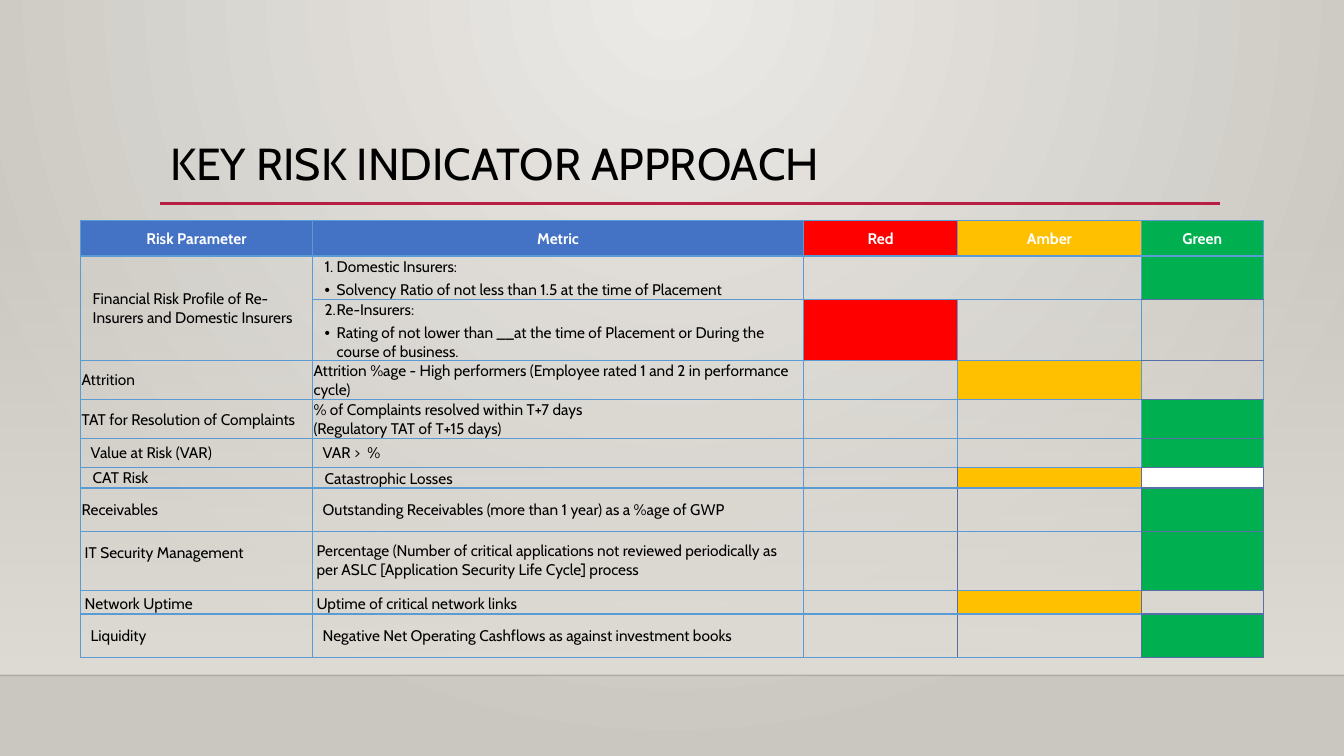
from dataclasses import dataclass
from typing import Any, Optional

from lxml.etree import SubElement as Sub
from pptx import Presentation
from pptx.dml.color import RGBColor as Rgb
from pptx.enum.shapes import MSO_CONNECTOR as Link, MSO_SHAPE as Shape
from pptx.enum.text import MSO_ANCHOR as Anchor, PP_ALIGN as Align
from pptx.oxml.ns import qn
from pptx.util import Inches, Pt


@dataclass(frozen=True)
class Theme:
    font: str = "Cabin"
    title_size: int = 32
    body_size: int = 11
    black: str = "000000"
    white: str = "FFFFFF"
    header: str = "4472C4"
    red: str = "FF0000"
    amber: str = "FFC000"
    green: str = "00B050"
    grid: str = "5B9BD5"
    indigo: str = "586EA6"
    accent: str = "B71E42"
    floor_line: str = "000001"
    wall: str = "DFDBD5"
    glow: str = "ECEAE7"
    edge: str = "CAC7C1"


@dataclass(frozen=True)
class Entry:
    text: str
    inset: tuple[float, float, float, float] = (0.01, 0.01, 0.01, 0)
    numbered_from: Optional[int] = None


@dataclass(frozen=True)
class Indicator:
    height: float
    parameter: Optional[Entry]
    metric: Entry
    ratings: tuple[Optional[str], Optional[str], Optional[str]]


@dataclass(frozen=True)
class Rule:
    start: tuple[float, float]
    end: tuple[float, float]
    color: str
    width: float
    opacity: Optional[int] = None


THEME = Theme()
WIDE = (0.12, 0.01, 0.01, 0)
NORMAL = (0.1, 0.05, 0.1, 0.05)
SNUG = (0.04, 0.04, 0.01, 0)
COLUMNS = (2.3, 4.87, 1.53, 1.82, 1.21)
SHARED_BORDER_ROW = 6
RED, AMBER, GREEN = range(2, 5)

RULES = (
    Rule((0, 6.7), (13.33, 6.7), THEME.floor_line, 1, 20),
    Rule((1.59, 2.02), (12.1, 2.02), THEME.accent, 2.5),
)
INDICATORS = (
    Indicator(0.35, Entry("Risk Parameter"), Entry("Metric"),
              (THEME.red, THEME.amber, THEME.green)),
    Indicator(0.43, Entry("Financial Risk Profile of Re-Insurers and Domestic Insurers", WIDE),
              Entry("Domestic Insurers:\nSolvency Ratio of not less than 1.5 at the time of Placement",
                    WIDE, 1), (None, None, THEME.green)),
    Indicator(0.53, None,
              Entry("Re-Insurers:\nRating of not lower than __at the time of Placement "
                    "or During the course of business.", WIDE, 2), (THEME.red, None, None)),
    Indicator(0.39, Entry("Attrition"),
              Entry("Attrition %age - High performers (Employee rated 1 and 2 in performance cycle)"),
              (None, THEME.amber, None)),
    Indicator(0.39, Entry("TAT for Resolution of Complaints"),
              Entry("% of Complaints resolved within T+7 days\n(Regulatory TAT of T+15 days)"),
              (None, None, THEME.green)),
    Indicator(0.29, Entry("Value at Risk (VAR)", NORMAL), Entry("VAR >  %", NORMAL),
              (None, None, THEME.green)),
    Indicator(0.2, Entry("CAT Risk", (0.12, 0, 0, 0)), Entry("Catastrophic Losses", WIDE),
              (None, THEME.amber, THEME.white)),
    Indicator(0.43, Entry("Receivables"),
              Entry("Outstanding Receivables (more than 1 year) as a %age of GWP", NORMAL),
              (None, None, THEME.green)),
    Indicator(0.59, Entry("IT Security Management", (0.04, 0.04, 0.01, 0.2)),
              Entry("Percentage (Number of critical applications not reviewed periodically as "
                    "per ASLC [Application Security Life Cycle] process", (0.04, 0.04, 0.1, 0.05)),
              (None, None, THEME.green)),
    Indicator(0.23, Entry("Network Uptime", SNUG), Entry("Uptime of critical network links", SNUG),
              (None, THEME.amber, None)),
    Indicator(0.43, Entry("Liquidity", NORMAL),
              Entry("Negative Net Operating Cashflows as against investment books", NORMAL),
              (None, None, THEME.green)),
)


def apply(target: Any, values: dict[str, Any]) -> None:
    """Set every named attribute on the target."""
    for name, value in values.items():
        setattr(target, name, value)


def style_font(font: Any, size: int, color: str, bold: bool = False) -> None:
    """Give a font the theme face with a size, colour and weight."""
    apply(font, {"name": THEME.font, "size": Pt(size), "bold": bold})
    font.color.rgb = Rgb.from_string(color)


def set_gradient(fill: Any, first: str, last: str) -> None:
    """Fill with a two-colour gradient running downwards."""
    fill.gradient()
    fill.gradient_angle = 270
    for stop, color, position in zip(fill.gradient_stops, (first, last), (0, 1)):
        stop.color.rgb = Rgb.from_string(color)
        stop.position = position


def set_opacity(element: Any, percent: int) -> None:
    """Set the opacity of the first colour inside an element."""
    Sub(element.find(".//" + qn("a:srgbClr")), qn("a:alpha"), val=str(percent * 1000))


def draw_backdrop(slide: Any) -> None:
    """Draw the glowing wall and the fading band."""
    set_gradient(slide.background.fill, THEME.glow, THEME.edge)
    gradient = slide.element.find(".//" + qn("a:gradFill"))
    gradient.remove(gradient.find(qn("a:lin")))
    circle = Sub(gradient, qn("a:path"), path="circle")
    Sub(circle, qn("a:fillToRect"), l="43000", t="0", r="43000", b="100000")
    band = slide.shapes.add_shape(Shape.RECTANGLE, Inches(0), Inches(2.21), Inches(13.33), Inches(4.49))
    band.shadow.inherit = False
    band.line.fill.background()
    set_gradient(band.fill, THEME.wall, THEME.wall)
    set_opacity(band.element.spPr, 0)


def draw_rule(slide: Any, rule: Rule) -> None:
    """Draw one horizontal rule."""
    line = slide.shapes.add_connector(Link.STRAIGHT, *map(Inches, rule.start + rule.end))
    line.line.color.rgb = Rgb.from_string(rule.color)
    line.line.width = Pt(rule.width)
    if rule.opacity is not None:
        set_opacity(line.line._ln, rule.opacity)
    Sub(line._element.spPr, qn("a:effectLst"))


def draw_title(slide: Any) -> None:
    """Write the slide heading."""
    heading = slide.shapes.add_textbox(Inches(1.59), Inches(1.36), Inches(10.5), Inches(0.66))
    apply(heading.text_frame, {"word_wrap": True, "vertical_anchor": Anchor.TOP,
                               "text": "KEY RISK INDICATOR APPROACH"})
    paragraph = heading.text_frame.paragraphs[0]
    paragraph.line_spacing = 0.9
    style_font(paragraph.runs[0].font, THEME.title_size, THEME.black)


def draw_borders(cell: Any, row: int, column: int) -> None:
    """Outline a cell, with indigo edges around the rating columns."""
    late = row >= SHARED_BORDER_ROW
    indigo_sides = {"L": late and column >= AMBER, "R": late and column >= RED,
                    "T": column == GREEN and row >= 2, "B": column == GREEN and row >= 1}
    properties = cell._tc.get_or_add_tcPr()
    for side, is_indigo in indigo_sides.items():
        border = Sub(properties, qn(f"a:ln{side}"), w=str(Pt(1)))
        solid = Sub(border, qn("a:solidFill"))
        Sub(solid, qn("a:srgbClr"), val=THEME.indigo if is_indigo else THEME.grid)


def add_marker(paragraph: Any, number: Optional[int]) -> None:
    """Give a paragraph a number, or a bullet when there is none."""
    properties = paragraph._p.get_or_add_pPr()
    apply(paragraph, {"space_after": Pt(3)})
    properties.set("marL", str(Inches(0.12)))
    properties.set("indent", str(-Inches(0.12)))
    if number is None:
        Sub(properties, qn("a:buFont"), typeface="Arial")
        Sub(properties, qn("a:buChar"), char="•")
    else:
        Sub(properties, qn("a:buAutoNum"), type="arabicPeriod", startAt=str(number))


def fill_cell(cell: Any, entry: Optional[Entry], fill: Optional[str], header: bool) -> None:
    """Write and colour one table cell."""
    entry = entry or Entry("")
    sides = ("margin_left", "margin_top", "margin_right", "margin_bottom")
    apply(cell, dict(zip(sides, map(Inches, entry.inset)))
          | {"vertical_anchor": Anchor.MIDDLE, "text": entry.text})
    for index, paragraph in enumerate(cell.text_frame.paragraphs):
        paragraph.alignment = Align.CENTER if header else Align.LEFT
        if entry.numbered_from:
            add_marker(paragraph, None if index else entry.numbered_from)
        for run in paragraph.runs:
            style_font(run.font, THEME.body_size, THEME.white if header else THEME.black, header)
        Sub(paragraph._p, qn("a:endParaRPr"), sz=str(THEME.body_size * 100))
    if fill:
        cell.fill.solid()
        cell.fill.fore_color.rgb = Rgb.from_string(fill)
    else:
        cell.fill.background()


def draw_table(slide: Any) -> None:
    """Build the table of risk indicators and their ratings."""
    height = sum(indicator.height for indicator in INDICATORS)
    table = slide.shapes.add_table(len(INDICATORS), len(COLUMNS), Inches(0.8), Inches(2.19),
                                   Inches(sum(COLUMNS)), Inches(height)).table
    apply(table, {"first_row": False, "horz_banding": False})
    for column, width in zip(table.columns, COLUMNS):
        column.width = Inches(width)
    for row, indicator in enumerate(INDICATORS):
        table.rows[row].height = Inches(indicator.height)
        header = row == 0
        label_fill = THEME.header if header else None
        names = map(Entry, ("Red", "Amber", "Green")) if header else (None,) * 3
        entries = (indicator.parameter, indicator.metric, *names)
        fills = (label_fill, label_fill, *indicator.ratings)
        for column, (entry, fill) in enumerate(zip(entries, fills)):
            cell = table.cell(row, column)
            draw_borders(cell, row, column)
            fill_cell(cell, entry, fill, header)
    table.cell(1, 0).merge(table.cell(2, 0))
    table.cell(1, RED).merge(table.cell(1, AMBER))


def main() -> None:
    """Build and save the slide."""
    deck = Presentation()
    apply(deck, {"slide_width": Inches(13.33), "slide_height": Inches(7.5)})
    slide = deck.slides.add_slide(deck.slide_layouts[6])
    draw_backdrop(slide)
    for rule in RULES:
        draw_rule(slide, rule)
    draw_title(slide)
    draw_table(slide)
    deck.save("out.pptx")


if __name__ == "__main__":
    main()
